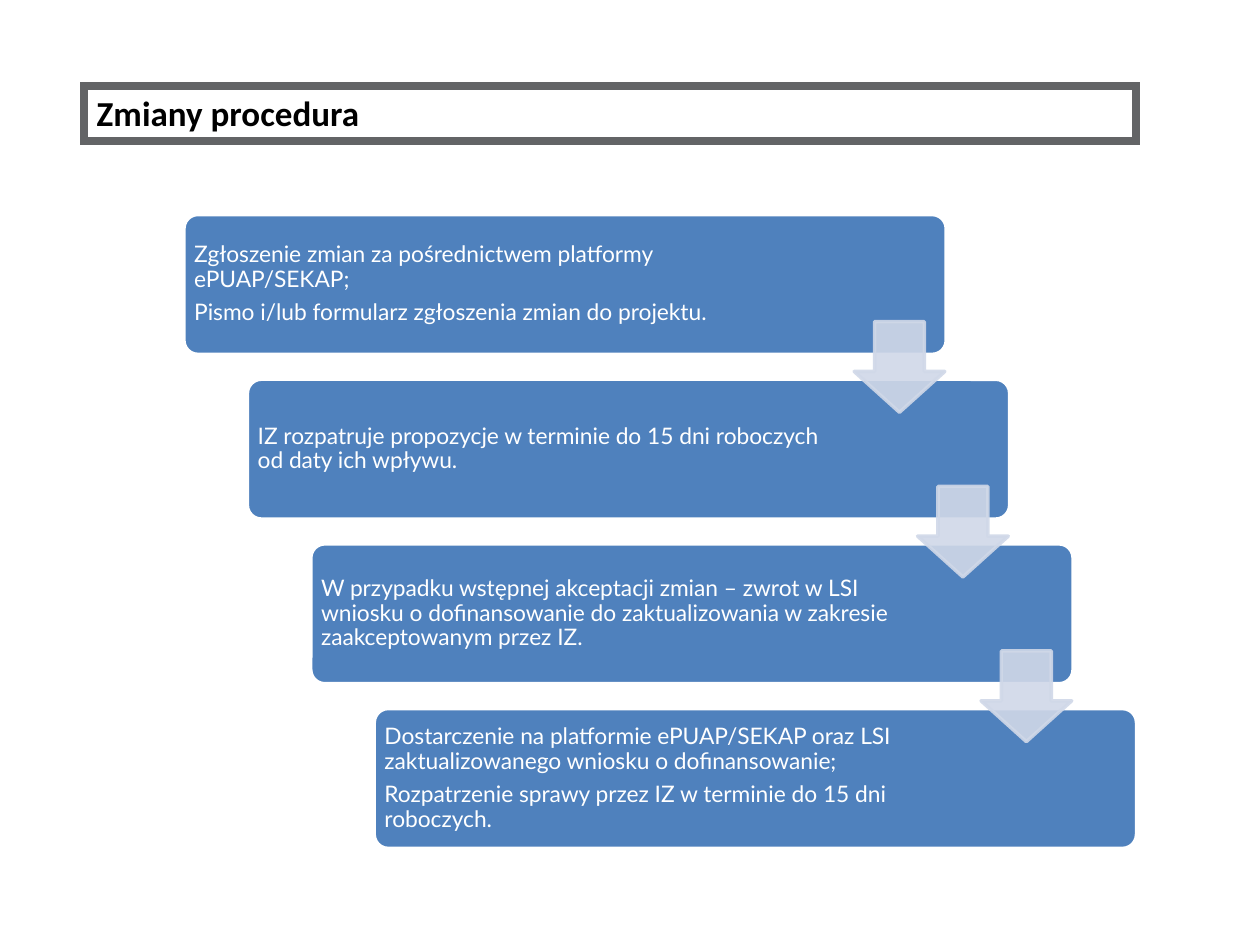
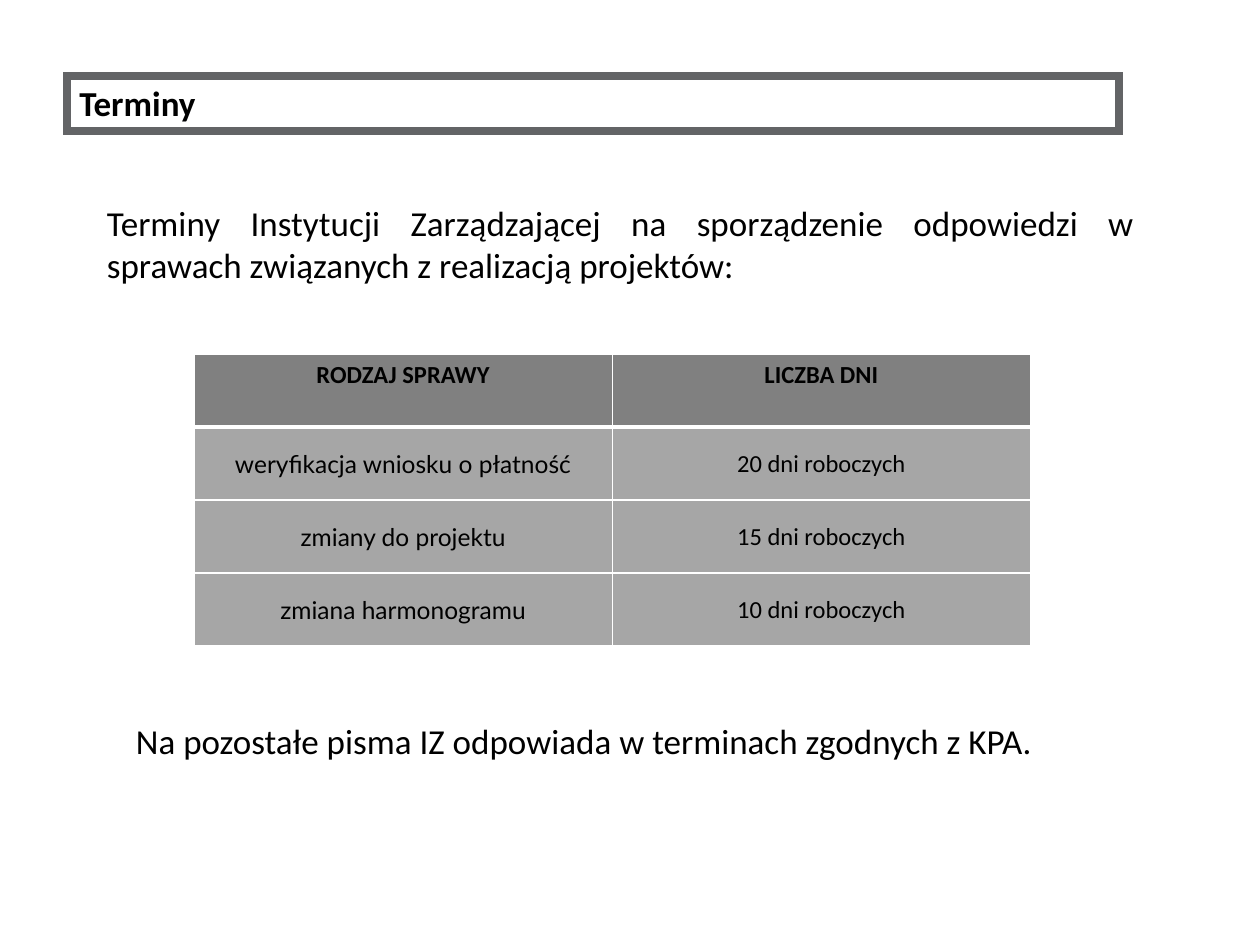
import pptx
import pptx.util
import pptx.dml.color
import pptx.enum.shapes
import pptx.enum.text
import pptx.oxml
import pptx.oxml.ns

Pt = pptx.util.Pt
RGBColor = pptx.dml.color.RGBColor
SHAPE = pptx.enum.shapes.MSO_SHAPE
ANCHOR = pptx.enum.text.MSO_ANCHOR
ALIGN = pptx.enum.text.PP_ALIGN
FIT = pptx.enum.text.MSO_AUTO_SIZE

BLACK = RGBColor(0x00, 0x00, 0x00)
WHITE = RGBColor(0xFF, 0xFF, 0xFF)
FRAME_GREY = RGBColor(0x63, 0x64, 0x66)
STEP_BLUE = RGBColor(0x4F, 0x81, 0xBD)
ARROW_BLUE = RGBColor(0xD0, 0xD8, 0xE8)
HEADER_GREY = RGBColor(0x80, 0x80, 0x80)
ROW_GREY = RGBColor(0xA6, 0xA6, 0xA6)

TITLE_FONT = {"name": "Calibri", "size": Pt(20), "bold": True}
BODY_FONT = {"name": "Calibri", "size": Pt(20)}
STEP_FONT = {"name": "Lato", "size": Pt(13)}
HEADER_FONT = {"name": "Calibri", "size": Pt(14), "bold": True}
CASE_FONT = {"name": "Lato", "size": Pt(14), "bold": False}
DAYS_FONT = {"name": "Calibri", "size": Pt(14), "bold": False}

GROWING = {"word_wrap": True, "auto_size": FIT.SHAPE_TO_FIT_TEXT}
TOP_GROWING = {**GROWING, "vertical_anchor": ANCHOR.TOP}
STEP_FRAME = {"word_wrap": True, "vertical_anchor": ANCHOR.MIDDLE,
              **{f"margin_{side}": Pt(3.6) for side in ("left", "top", "right", "bottom")}}
STEP_PARAGRAPH = {"line_spacing": 0.9, "space_after": Pt(5)}

STEPS = [
    ["Zgłoszenie zmian za pośrednictwem platformy ePUAP/SEKAP;",
     "Pismo i/lub formularz zgłoszenia zmian do projektu."],
    ["IZ rozpatruje propozycje w terminie do 15 dni roboczych od daty ich wpływu."],
    ["W przypadku wstępnej akceptacji zmian – zwrot w LSI wniosku o dofinansowanie "
     "do zaktualizowania w zakresie zaakceptowanym przez IZ."],
    ["Dostarczenie na platformie ePUAP/SEKAP oraz LSI zaktualizowanego wniosku o dofinansowanie;",
     "Rozpatrzenie sprawy przez IZ w terminie do 15 dni roboczych."],
]
DEADLINES = [
    ("RODZAJ SPRAWY", "LICZBA DNI"),
    ("weryfikacja wniosku o płatność", "20 dni roboczych"),
    ("zmiany do projektu", "15 dni roboczych"),
    ("zmiana harmonogramu", "10 dni roboczych"),
]


def apply(target, values):
    for name, value in values.items():
        setattr(target, name, value)


def write(frame, lines, font, color=BLACK, layout=None, paragraph_format=None):
    apply(frame, layout or {})
    for index, line in enumerate(lines):
        paragraph = frame.paragraphs[0] if index == 0 else frame.add_paragraph()
        apply(paragraph, {"text": line, **(paragraph_format or {})})
        apply(paragraph.font, font)
        paragraph.font.color.rgb = color


def add_text(slide, box, *args, **formats):
    write(slide.shapes.add_textbox(*map(Pt, box)).text_frame, *args, **formats)


def add_block(slide, kind, box, line_color, line_width, fill_color=None, adjustments=()):
    block = slide.shapes.add_shape(kind, *map(Pt, box))
    block.shadow.inherit = False
    if fill_color is None:
        block.fill.background()
    else:
        block.fill.solid()
        block.fill.fore_color.rgb = fill_color
    block.line.color.rgb = line_color
    block.line.width = Pt(line_width)
    for index, value in enumerate(adjustments):
        block.adjustments[index] = value
    return block


def add_title(slide, left, top, title):
    banner = add_block(slide, SHAPE.RECTANGLE, (left, top, 601.2, 31.5), FRAME_GREY, 4.5)
    miter = pptx.oxml.parse_xml(f'<a:miter {pptx.oxml.ns.nsdecls("a")} lim="800000"/>')
    banner.line.fill._xPr.append(miter)
    write(banner.text_frame, [title], TITLE_FONT, layout=TOP_GROWING,
          paragraph_format={"alignment": ALIGN.LEFT})


def add_staircase(slide, left, top):
    width, height, shift, drop = 435.6, 79.9, 36.25, 94.1
    corners = [(left + shift * index, top + drop * index) for index in range(len(STEPS))]
    for (x, y), lines in zip(corners, STEPS):
        add_block(slide, SHAPE.ROUNDED_RECTANGLE, (x, y, width, height), WHITE, 2, STEP_BLUE, [0.1])
        add_text(slide, (x + 2.3, y + 2.5, 342.7, 74.9), lines, STEP_FONT, WHITE,
                 layout=STEP_FRAME, paragraph_format=STEP_PARAGRAPH)
    for x, y in corners[:-1]:
        arrow = add_block(slide, SHAPE.DOWN_ARROW, (x + 383, y + 61.2, 51.8, 51.8),
                          ARROW_BLUE, 2, ARROW_BLUE, [0.55, 0.45])
        for color in arrow._element.spPr.iter(pptx.oxml.ns.qn("a:srgbClr")):
            color.append(pptx.oxml.parse_xml(
                f'<a:alpha {pptx.oxml.ns.nsdecls("a")} val="90000"/>'))


def add_borders(cell, widths):
    properties = cell._tc.get_or_add_tcPr()
    for side, width in zip("LRTB", widths):
        properties.append(pptx.oxml.parse_xml(
            f'<a:ln{side} {pptx.oxml.ns.nsdecls("a")} w="{Pt(width)}">'
            f'<a:solidFill><a:srgbClr val="{WHITE}"/></a:solidFill></a:ln{side}>'))


def add_deadlines(slide, box):
    table = slide.shapes.add_table(len(DEADLINES), 2, *map(Pt, box)).table
    for row, entries in enumerate(DEADLINES):
        is_header = row == 0
        for column, entry in enumerate(entries):
            cell = table.cell(row, column)
            add_borders(cell, (1, 1, 3 if row == 1 else 1, 3 if is_header else 1))
            cell.fill.solid()
            cell.fill.fore_color.rgb = HEADER_GREY if is_header else ROW_GREY
            cell.vertical_anchor = ANCHOR.TOP if is_header else ANCHOR.MIDDLE
            font = HEADER_FONT if is_header else (CASE_FONT, DAYS_FONT)[column]
            write(cell.text_frame, [entry], font, paragraph_format={"alignment": ALIGN.CENTER})


def build_procedure(slide):
    add_title(slide, 48.2, 49, "Zmiany procedura")
    add_staircase(slide, 105.1, 122.6)


def build_terms(slide):
    justified = {"layout": GROWING, "paragraph_format": {"alignment": ALIGN.JUSTIFY}}
    add_text(slide, (54, 111.6, 601.2, 55.7),
             ["Terminy Instytucji Zarządzającej na sporządzenie odpowiedzi w sprawach "
              "związanych z realizacją projektów:"], BODY_FONT, **justified)
    add_deadlines(slide, (110.9, 202.3, 478, 167))
    add_text(slide, (70.6, 407.3, 572.4, 31.5),
             ["Na pozostałe pisma IZ odpowiada w terminach zgodnych z KPA."], BODY_FONT, **justified)
    add_title(slide, 38.2, 43.2, "Terminy")


def main():
    deck = pptx.Presentation()
    apply(deck, {"slide_width": Pt(720), "slide_height": Pt(540)})
    for build in (build_procedure, build_terms):
        build(deck.slides.add_slide(deck.slide_layouts[6]))
    deck.save("out.pptx")


if __name__ == "__main__":
    main()
